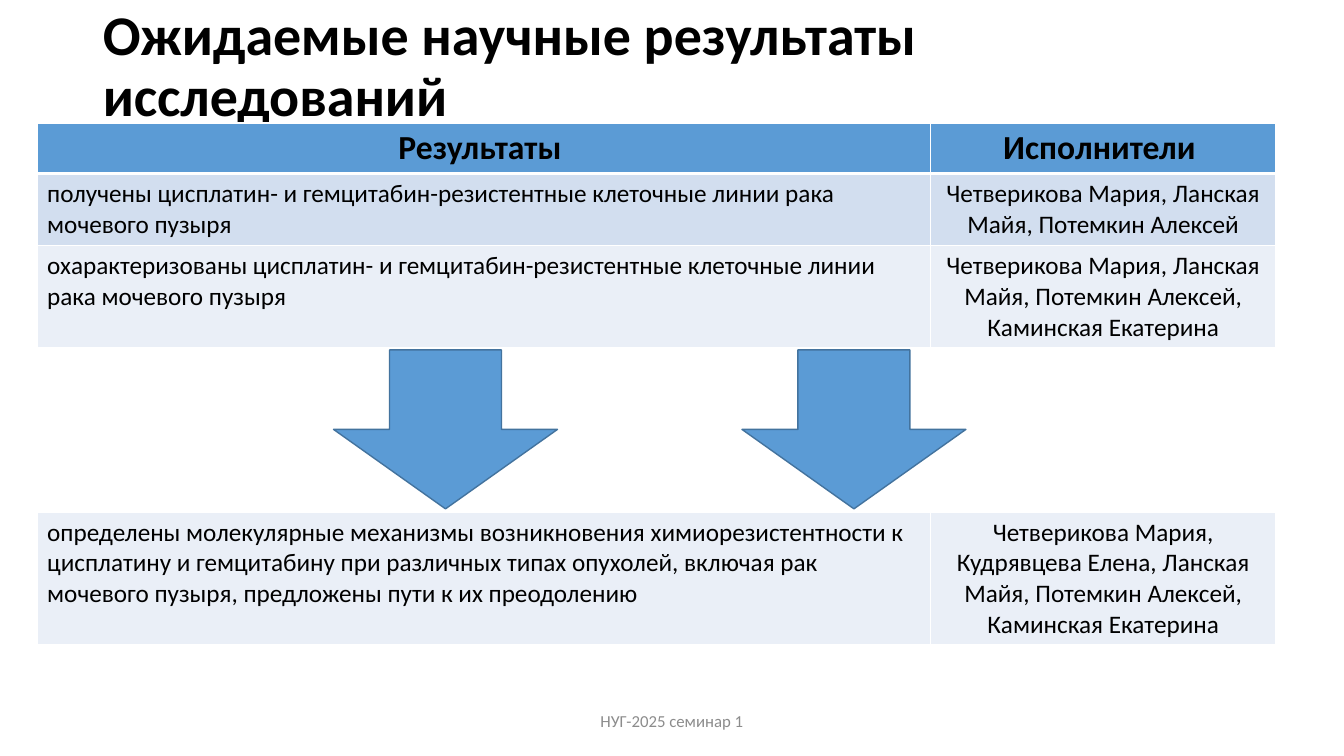
from dataclasses import dataclass

from lxml import etree
from pptx import Presentation
from pptx.dml.color import RGBColor
from pptx.enum import shapes, text
from pptx.oxml import ns
from pptx.util import Pt

LEFT, CENTER = text.PP_ALIGN.LEFT, text.PP_ALIGN.CENTER
MIDDLE = text.MSO_ANCHOR.MIDDLE


@dataclass(frozen=True)
class Theme:
    font: str = "Calibri"
    ink: str = "000000"
    muted: str = "8C8C8C"
    accent: str = "5B9BD5"
    accent_line: str = "43739E"
    band_dark: str = "D2DEEF"
    band_light: str = "EAEFF7"
    grid: str = "FFFFFF"
    title_size: int = 40
    header_size: int = 24
    body_size: int = 18
    footer_size: int = 12


THEME = Theme()

TITLE = "Ожидаемые научные результаты исследований"
FOOTER = "НУГ-2025 семинар 1"
HEADER = ("Результаты ", "Исполнители ")
ROWS = [
    (36, THEME.accent, [HEADER[0]], [HEADER[1]]),
    (51.5, THEME.band_dark,
     ["получены цисплатин- и гемцитабин-резистентные клеточные линии рака мочевого пузыря"],
     ["Четверикова Мария, Ланская Майя, Потемкин Алексей"]),
    (73, THEME.band_light,
     ["охарактеризованы цисплатин- и гемцитабин-резистентные клеточные линии рака мочевого пузыря"],
     ["Четверикова Мария, Ланская Майя, Потемкин Алексей,", "Каминская Екатерина"]),
    (117.5, None, [], []),
    (94.5, THEME.band_light,
     ["определены молекулярные механизмы возникновения химиорезистентности к цисплатину "
      "и гемцитабину при различных типах опухолей, включая рак мочевого пузыря, "
      "предложены пути к их преодолению"],
     ["Четверикова Мария, Кудрявцева Елена, Ланская Майя, Потемкин Алексей,",
      "Каминская Екатерина"]),
]

SLIDE_SIZE = (960, 540)
TITLE_BOX = (66.24, 11.52, 828, 74.16)
FOOTER_BOX = (318, 500.5, 324, 28.8)
TABLE_LEFT, TABLE_TOP = 26.5, 87.84
COL_WIDTHS = (638, 247)
ARROW_LEFTS = (238.25, 530)
ARROW_TOP, ARROW_W, ARROW_H = 250, 160, 113.5


def points(values):
    return [Pt(v) for v in values]


def rgb(value):
    return RGBColor.from_string(value)


def write(tf, lines, size, color=THEME.ink, bold=False, align=LEFT):
    for i, line in enumerate(lines):
        p = tf.paragraphs[0] if i == 0 else tf.add_paragraph()
        p.alignment = align
        r = p.add_run()
        r.text = line
        r.font.name = THEME.font
        r.font.size = Pt(size)
        r.font.bold = bold
        r.font.color.rgb = rgb(color)


def set_borders(cell, widths):
    tc_pr = cell._tc.get_or_add_tcPr()
    for i, (side, width) in enumerate(widths.items()):
        ln = etree.Element(ns.qn("a:ln" + side), w=str(Pt(width)))
        fill = etree.SubElement(ln, ns.qn("a:solidFill"))
        etree.SubElement(fill, ns.qn("a:srgbClr"), val=THEME.grid)
        tc_pr.insert(i, ln)


def add_title(slide):
    sp = slide.shapes.title
    sp.left, sp.top, sp.width, sp.height = points(TITLE_BOX)
    tf = sp.text_frame
    tf.word_wrap = True
    tf.auto_size = text.MSO_AUTO_SIZE.NONE
    tf.vertical_anchor = MIDDLE
    write(tf, [TITLE], THEME.title_size, bold=True)
    tf.paragraphs[0].line_spacing = 0.9


def add_results(slide):
    heights = [row[0] for row in ROWS]
    frame = slide.shapes.add_table(
        len(ROWS), len(COL_WIDTHS),
        *points((TABLE_LEFT, TABLE_TOP, sum(COL_WIDTHS), sum(heights))))
    table = frame.table
    for col, width in zip(table.columns, COL_WIDTHS):
        col.width = Pt(width)
    for i, (height, color, *cells) in enumerate(ROWS):
        table.rows[i].height = Pt(height)
        is_header = i == 0
        size = THEME.header_size if is_header else THEME.body_size
        for j, lines in enumerate(cells):
            cell = table.cell(i, j)
            if color:
                cell.fill.solid()
                cell.fill.fore_color.rgb = rgb(color)
            else:
                cell.fill.background()
            align = CENTER if is_header or j == 1 else LEFT
            write(cell.text_frame, lines, size, bold=is_header, align=align)
            set_borders(cell, {"L": 1, "R": 1, "T": 3 if i == 1 else 1,
                               "B": 3 if is_header else 1})


def add_arrow(slide, left):
    sp = slide.shapes.add_shape(shapes.MSO_SHAPE.DOWN_ARROW,
                                *points((left, ARROW_TOP, ARROW_W, ARROW_H)))
    sp.shadow.inherit = False
    sp.fill.solid()
    sp.fill.fore_color.rgb = rgb(THEME.accent)
    sp.line.color.rgb = rgb(THEME.accent_line)
    sp.line.width = Pt(1)


def add_footer(slide):
    tf = slide.shapes.add_textbox(*points(FOOTER_BOX)).text_frame
    tf.word_wrap = True
    tf.vertical_anchor = MIDDLE
    write(tf, [FOOTER], THEME.footer_size, THEME.muted, align=CENTER)


def main():
    prs = Presentation()
    prs.slide_width, prs.slide_height = points(SLIDE_SIZE)
    slide = prs.slides.add_slide(prs.slide_layouts[5])
    add_title(slide)
    add_footer(slide)
    add_results(slide)
    for left in ARROW_LEFTS:
        add_arrow(slide, left)
    prs.save("out.pptx")


if __name__ == "__main__":
    main()
